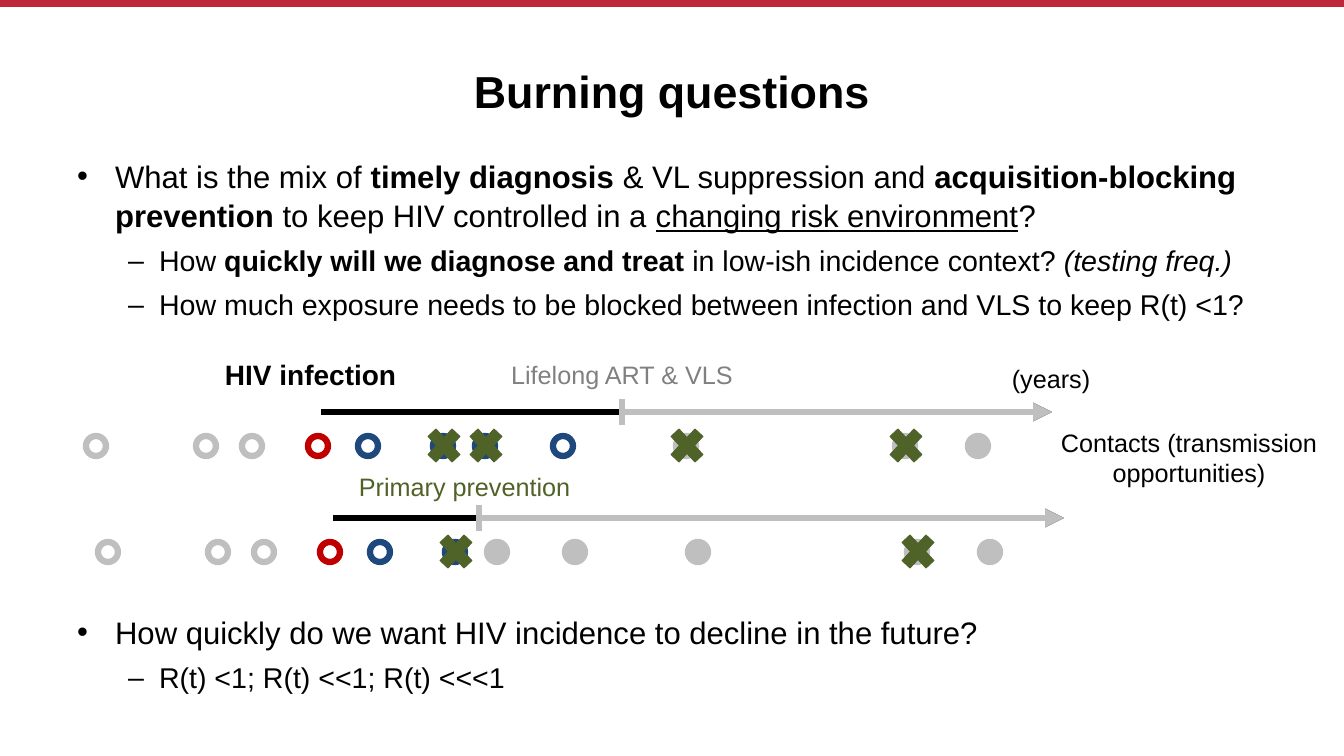
from pptx import Presentation
from pptx.dml.color import RGBColor
from pptx.enum.shapes import MSO_CONNECTOR, MSO_SHAPE
from pptx.enum.text import MSO_ANCHOR, MSO_AUTO_SIZE, PP_ALIGN
from pptx.oxml.ns import qn
from pptx.util import Emu, Pt
from lxml.etree import SubElement

EMU_PER_PX = 914400 / 100.8
BLACK = RGBColor(0x00, 0x00, 0x00)
CRIMSON = RGBColor(0xBE, 0x27, 0x3A)
RED = RGBColor(0xC0, 0x00, 0x00)
BLUE = RGBColor(0x1F, 0x49, 0x7D)
SILVER = RGBColor(0xBF, 0xBF, 0xBF)
GRAY = RGBColor(0x80, 0x80, 0x80)
GREEN = RGBColor(0x4F, 0x62, 0x28)

# Bullet, left margin, hanging indent and text size of each list level
LIST_LEVELS = [("•", 38, 38, 22.2), ("–", 82, 31, 20.4)]

QUESTIONS = [
    (0, 0, [("What is the mix of ", {}), ("timely diagnosis", {"bold": True}),
            (" & VL suppression and ", {}),
            ("acquisition-blocking prevention", {"bold": True}),
            (" to keep HIV controlled in a ", {}),
            ("changing risk environment", {"underline": True}), ("?", {})]),
    (1, 0, [("How ", {}), ("quickly will we diagnose and treat ", {"bold": True}),
            ("in low-ish incidence context? ", {}),
            ("(testing freq.)", {"italic": True})]),
    (1, 0, [("How much exposure needs to be blocked between infection "
             "and VLS to keep R(t) <1?", {})]),
    (0, 201, [("How quickly do we want HIV incidence to decline in the future?", {})]),
    (1, 0, [("R(t) <1; R(t) <<1; R(t) <<<1", {})]),
]

CONTACT_LEFTS = [86, 196, 242, 308, 358, 433, 475, 553, 676, 895, 968]
INFECTION = 3
# Shift, axis height, start of treatment, first suppressed contact, blocked contacts
SCENARIOS = [(0, 412, 622, 8, {5, 6, 8, 9}), (12, 518, 479, 6, {5, 9})]


def px(length):
    return Emu(round(length * EMU_PER_PX))


def write(paragraph, text, size, color=BLACK, bold=False, italic=False, underline=False):
    """Append text to the paragraph, with a line break at each newline."""
    for number, line in enumerate(text.split("\n")):
        if number:
            paragraph.add_line_break()
        run = paragraph.add_run()
        run.text = line
        font = run.font
        font.name, font.size, font.color.rgb = "Arial", Pt(size), color
        font.bold, font.italic, font.underline = bold, italic, underline


class Board:
    def __init__(self, slide):
        self.slide = slide
        self.stroke = 4.5

    def title(self, text, left, top, width, height):
        heading = self.slide.shapes.title
        self.place(heading, left, top, width, height)
        frame = heading.text_frame
        frame.auto_size = MSO_AUTO_SIZE.NONE
        frame.vertical_anchor = MSO_ANCHOR.MIDDLE
        frame.paragraphs[0].alignment = PP_ALIGN.CENTER
        write(frame.paragraphs[0], text, size=32, bold=True)

    def bullets(self, items, left, top, width, height):
        body = self.slide.placeholders[1]
        self.place(body, left, top, width, height)
        frame = body.text_frame
        frame.auto_size = MSO_AUTO_SIZE.NONE
        for number, (level, gap, parts) in enumerate(items):
            paragraph = frame.add_paragraph() if number else frame.paragraphs[0]
            bullet, margin, hang, size = LIST_LEVELS[level]
            paragraph.level = level
            paragraph.line_spacing = 1.04
            paragraph.space_before, paragraph.space_after = Pt(gap), Pt(6)
            properties = paragraph._p.get_or_add_pPr()
            properties.set("marL", str(px(margin)))
            properties.set("indent", str(-px(hang)))
            SubElement(properties, qn("a:buChar")).set("char", bullet)
            for text, style in parts:
                write(paragraph, text, size=size, **style)

    def place(self, shape, left, top, width, height):
        shape.left, shape.top = px(left), px(top)
        shape.width, shape.height = px(width), px(height)

    def label(self, text, left, top, width, height, align=PP_ALIGN.LEFT, **style):
        box = self.slide.shapes.add_textbox(px(left), px(top), px(width), px(height))
        box.text_frame.word_wrap = False
        paragraph = box.text_frame.paragraphs[0]
        paragraph.alignment = align
        write(paragraph, text, **style)

    def line(self, x1, y1, x2, y2, color, stroke=None, arrow=False):
        connector = self.slide.shapes.add_connector(
            MSO_CONNECTOR.STRAIGHT, px(x1), px(y1), px(x2), px(y2))
        connector.line.color.rgb = color
        connector.line.width = Pt(stroke or self.stroke)
        if arrow:
            SubElement(connector.line._get_or_add_ln(), qn("a:tailEnd")).set("type", "triangle")
        SubElement(connector._element.spPr, qn("a:effectLst"))

    def mark(self, kind, left, top, width, height, color, stroke=None, filled=True):
        shape = self.slide.shapes.add_shape(kind, px(left), px(top), px(width), px(height))
        shape.shadow.inherit = False
        if filled:
            shape.fill.solid()
            shape.fill.fore_color.rgb = color
        else:
            shape.fill.background()
        shape.line.color.rgb = color
        shape.line.width = Pt(stroke or self.stroke)

    def timeline(self, shift, axis, treatment, suppressed, blocked):
        """Draw one course of infection with its contacts below the axis."""
        end = 1052 + shift
        self.line(321 + shift, axis, end, axis, BLACK, arrow=True)
        self.line(treatment, axis, end, axis, SILVER, arrow=True)
        self.line(treatment, axis + 13, treatment, axis - 13, SILVER)
        for number, left in enumerate(CONTACT_LEFTS):
            if number == INFECTION:
                color = RED
            else:
                color = BLUE if INFECTION < number < suppressed else SILVER
            self.mark(MSO_SHAPE.OVAL, left + shift, axis + 24, 20, 20, color,
                      filled=number >= suppressed)
            if number in blocked:
                self.mark(MSO_SHAPE.MATH_MULTIPLY, left + shift - 12, axis + 9, 46, 49,
                          GREEN, stroke=0.75)


def main():
    deck = Presentation()
    deck.slide_width, deck.slide_height = px(1344), px(756)
    board = Board(deck.slides.add_slide(deck.slide_layouts[1]))
    board.line(0, 3, 1344, 3, CRIMSON, stroke=6)
    board.title("Burning questions", 67, 52, 1210, 78)
    board.bullets(QUESTIONS, 67, 151, 1210, 568)
    for scenario in SCENARIOS:
        board.timeline(*scenario)
    board.label("HIV infection", 215, 353, 192, 44, size=20, bold=True)
    board.label("Lifelong ART & VLS", 500, 354, 244, 40, align=PP_ALIGN.CENTER,
                size=18, color=GRAY)
    board.label("(years)", 1002, 358, 100, 40, size=18)
    board.label("Contacts (transmission\nopportunities)", 1046, 422, 286, 72,
                align=PP_ALIGN.CENTER, size=18)
    board.label("Primary prevention", 349, 466, 234, 40, size=18, color=GREEN)
    deck.save("out.pptx")


if __name__ == "__main__":
    main()
